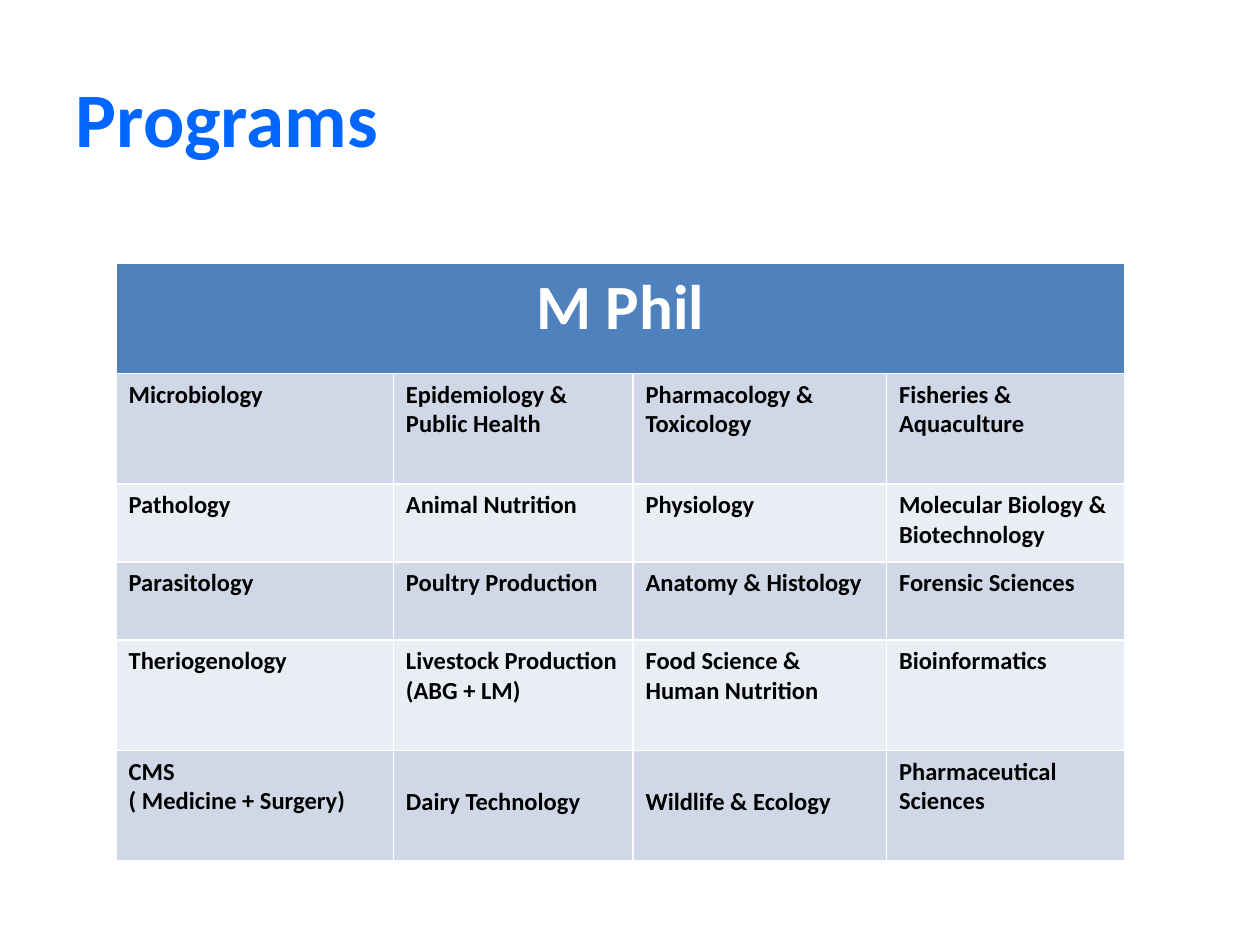
from pptx import Presentation
from pptx.dml.color import RGBColor
from pptx.enum.text import MSO_ANCHOR, PP_ALIGN
from pptx.util import Cm, Pt

MIDDLE = MSO_ANCHOR.MIDDLE
LEFT, CENTER = PP_ALIGN.LEFT, PP_ALIGN.CENTER

TITLE_BLUE = RGBColor(0x00, 0x66, 0xFF)
HEADER_BLUE = RGBColor(0x4F, 0x81, 0xBD)
BAND_DARK = RGBColor(0xD0, 0xD8, 0xE8)
BAND_LIGHT = RGBColor(0xE9, 0xED, 0xF4)
WHITE = RGBColor(0xFF, 0xFF, 0xFF)
BLACK = RGBColor(0x00, 0x00, 0x00)

COLUMN_WIDTHS = [5.59, 4.83, 5.11, 4.8]
ROW_HEIGHTS = [2.23, 2.23, 1.57, 1.57, 2.23, 2.23]
PROGRAMS = [
    ["Microbiology", "Epidemiology & Public Health",
     "Pharmacology & Toxicology", "Fisheries & Aquaculture"],
    ["Pathology", "Animal Nutrition",
     "Physiology", "Molecular Biology & Biotechnology"],
    ["Parasitology", "Poultry Production",
     "Anatomy & Histology", "Forensic Sciences"],
    ["Theriogenology", "Livestock Production\n(ABG + LM)",
     "Food Science & Human Nutrition", "Bioinformatics"],
    ["CMS\n( Medicine + Surgery)", "Dairy Technology",
     "Wildlife & Ecology", "Pharmaceutical Sciences"],
]
LOWERED = {"Dairy Technology", "Wildlife & Ecology"}


def write(frame, text, size, color, align=LEFT):
    for index, line in enumerate(text.split("\n")):
        paragraph = frame.add_paragraph() if index else frame.paragraphs[0]
        paragraph.alignment = align
        run = paragraph.add_run()
        run.text = line
        run.font.name = "Calibri"
        run.font.size = Pt(size)
        run.font.bold = True
        run.font.color.rgb = color


def fill_cell(cell, color):
    cell.fill.solid()
    cell.fill.fore_color.rgb = color


prs = Presentation()
prs.slide_width, prs.slide_height = Cm(25.4), Cm(19.05)
slide = prs.slides.add_slide(prs.slide_layouts[5])

heading = slide.shapes.title
heading.left, heading.top = Cm(1.27), Cm(0.76)
heading.width, heading.height = Cm(22.86), Cm(3.18)
heading.text_frame.vertical_anchor = MIDDLE
write(heading.text_frame, "Programs", 44, TITLE_BLUE)

programs = slide.shapes.add_table(
    len(ROW_HEIGHTS), len(COLUMN_WIDTHS), Cm(2.34), Cm(5.3),
    Cm(sum(COLUMN_WIDTHS)), Cm(sum(ROW_HEIGHTS))).table
for column, width in zip(programs.columns, COLUMN_WIDTHS):
    column.width = Cm(width)
for row, height in zip(programs.rows, ROW_HEIGHTS):
    row.height = Cm(height)

degree = programs.cell(0, 0)
degree.merge(programs.cell(0, len(COLUMN_WIDTHS) - 1))
fill_cell(degree, HEADER_BLUE)
write(degree.text_frame, "M Phil", 36, WHITE, CENTER)

for r, names in enumerate(PROGRAMS, start=1):
    for c, name in enumerate(names):
        cell = programs.cell(r, c)
        fill_cell(cell, BAND_DARK if r % 2 else BAND_LIGHT)
        write(cell.text_frame, name, 14, BLACK)
        if name in LOWERED:
            cell.margin_top = Cm(0.73)

prs.save("out.pptx")
